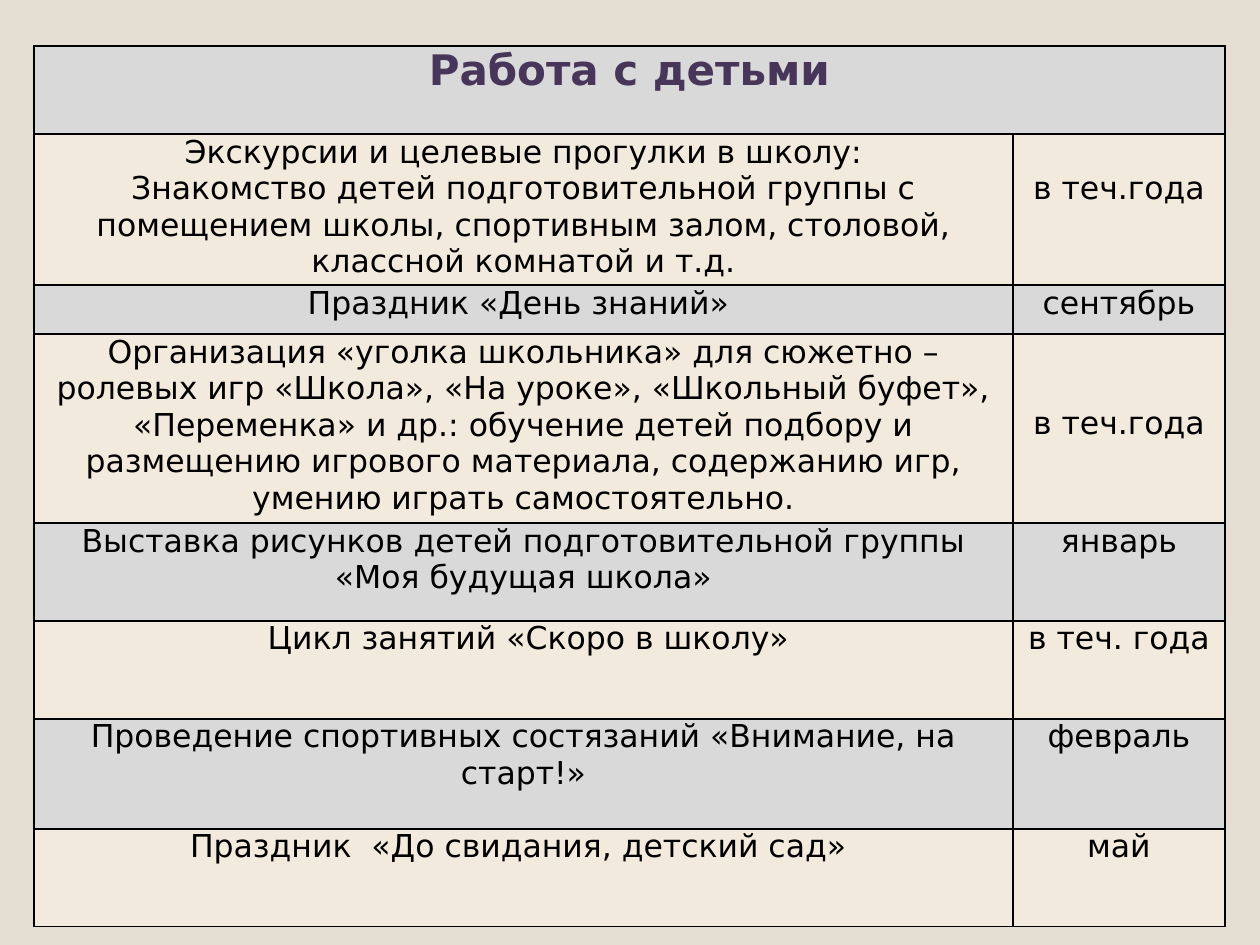
from lxml import etree
from pptx import Presentation
from pptx import util as u
from pptx.dml.color import RGBColor
from pptx.enum import text
from pptx.oxml import ns

TITLE = "Работа с детьми"
ACTIVITIES = [
    (["Экскурсии и целевые прогулки в школу:",
      "Знакомство детей подготовительной группы с помещением школы, "
      "спортивным залом, столовой, классной комнатой и т.д."], "в теч.года"),
    (["Праздник «День знаний» "], "сентябрь"),
    (["Организация «уголка школьника» для сюжетно – ролевых игр «Школа», "
      "«На уроке», «Школьный буфет», «Переменка» и др.: обучение детей подбору "
      "и размещению игрового материала, содержанию игр, умению играть "
      "самостоятельно."], "в теч.года"),
    (["Выставка рисунков детей подготовительной группы «Моя будущая школа»"], "январь"),
    ([" Цикл занятий «Скоро в школу»"], "в теч. года"),
    (["Проведение спортивных состязаний «Внимание, на старт!»"], "февраль"),
    (["Праздник  «До свидания, детский сад» "], "май"),
]
COLUMN_WIDTHS = [979, 212]
ROW_HEIGHTS = [88, 151, 49, 189, 98, 98, 110, 98]
LEFT, TOP = 34, 46
SIDE_MARGIN = 9
LINE_HEIGHT = 36
LINES_ABOVE_TERM = {1: 1, 3: 2}

BACKGROUND = RGBColor(0xE3, 0xDE, 0xD1)
GREY = RGBColor(0xD9, 0xD9, 0xD9)
CREAM = RGBColor(0xF3, 0xEA, 0xDE)
PURPLE = RGBColor(0x48, 0x36, 0x5A)
BLACK = RGBColor(0, 0, 0)
FONT = "DejaVu Sans"


def px(length):
    return u.Emu(round(length * 914400 / 126))


def add_borders(cell):
    properties = cell._tc.get_or_add_tcPr()
    for index, side in enumerate(("lnL", "lnR", "lnT", "lnB")):
        line = etree.Element(ns.qn(f"a:{side}"), w=str(u.Pt(1)))
        fill = etree.SubElement(line, ns.qn("a:solidFill"))
        etree.SubElement(fill, ns.qn("a:srgbClr"), val=str(BLACK))
        properties.insert(index, line)


def style_cell(cell, color):
    cell.fill.solid()
    cell.fill.fore_color.rgb = color
    cell.margin_left = cell.margin_right = px(SIDE_MARGIN)
    cell.margin_top = cell.margin_bottom = 0
    add_borders(cell)


def write(cell, lines, size=18, color=BLACK, bold=False):
    cell.text_frame.text = "\n".join(lines)
    for para in cell.text_frame.paragraphs:
        para.alignment = text.PP_ALIGN.CENTER
        para.font.name = FONT
        para.font.size = u.Pt(size)
        para.font.bold = bold
        para.font.color.rgb = color


def main():
    deck = Presentation()
    deck.slide_width, deck.slide_height = px(1260), px(945)
    page = deck.slides.add_slide(deck.slide_layouts[6])
    page.background.fill.solid()
    page.background.fill.fore_color.rgb = BACKGROUND

    table = page.shapes.add_table(
        len(ROW_HEIGHTS), len(COLUMN_WIDTHS), px(LEFT), px(TOP),
        px(sum(COLUMN_WIDTHS)), px(sum(ROW_HEIGHTS))).table
    for column, width in zip(table.columns, COLUMN_WIDTHS):
        column.width = px(width)
    for index, (row, height) in enumerate(zip(table.rows, ROW_HEIGHTS)):
        row.height = px(height)
        for cell in row.cells:
            style_cell(cell, CREAM if index % 2 else GREY)

    heading = table.cell(0, 0)
    heading.merge(table.cell(0, 1))
    write(heading, [TITLE], size=24, color=PURPLE, bold=True)
    for index, (activity, term) in enumerate(ACTIVITIES, start=1):
        write(table.cell(index, 0), activity)
        term_cell = table.cell(index, 1)
        write(term_cell, [term])
        term_cell.margin_top = px(LINE_HEIGHT * LINES_ABOVE_TERM.get(index, 0))

    deck.save("out.pptx")


if __name__ == "__main__":
    main()
